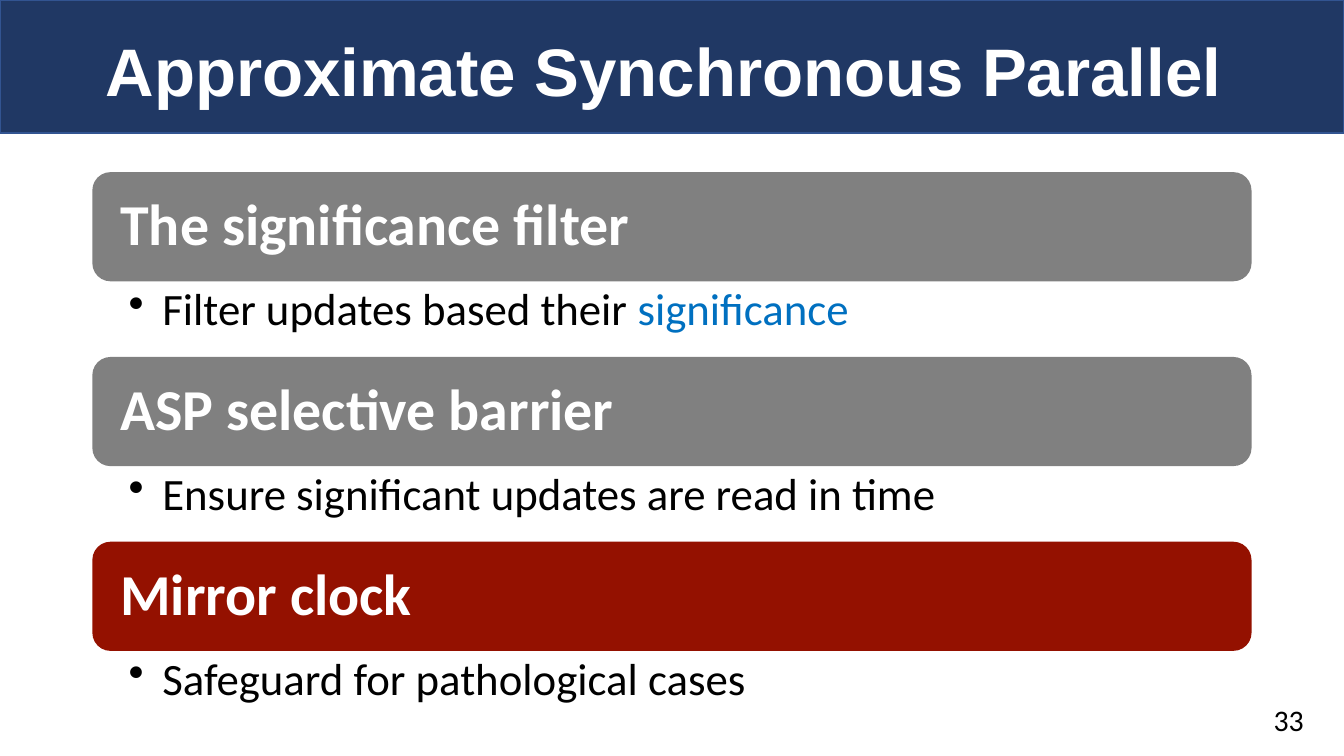
"""Build the Approximate Synchronous Parallel slide."""
from lxml import etree
from pptx import Presentation
from pptx.dml.color import RGBColor
from pptx.enum.shapes import MSO_SHAPE
from pptx.enum.text import MSO_ANCHOR, PP_ALIGN
from pptx.oxml.ns import qn
from pptx.util import Pt

RECTANGLE, ROUNDED = MSO_SHAPE.RECTANGLE, MSO_SHAPE.ROUNDED_RECTANGLE
TOP, MIDDLE = MSO_ANCHOR.TOP, MSO_ANCHOR.MIDDLE
LEFT, RIGHT = PP_ALIGN.LEFT, PP_ALIGN.RIGHT
NAVY = RGBColor(0x20, 0x38, 0x64)
EDGE = RGBColor(0x32, 0x54, 0x91)
GRAY = RGBColor(0x80, 0x80, 0x80)
RED = RGBColor(0x94, 0x11, 0x00)
BLUE = RGBColor(0x00, 0x70, 0xC0)
WHITE = RGBColor(0xFF, 0xFF, 0xFF)
BLACK = RGBColor(0x00, 0x00, 0x00)

MARGIN, WIDTH = 49.5, 621
FIRST_TOP, BAR_HEIGHT, DETAIL_HEIGHT = 92.25, 58.5, 40.5
SECTIONS = [
    ("The significance filter", GRAY, [("Filter updates based their ", BLACK), ("significance", BLUE)]),
    ("ASP selective barrier", GRAY, [("Ensure significant updates are read in time", BLACK)]),
    ("Mirror clock", RED, [("Safeguard for pathological cases", BLACK)]),
]


def add_panel(kind, left, top, width, height, fill):
    panel = page.shapes.add_shape(kind, Pt(left), Pt(top), Pt(width), Pt(height))
    panel.shadow.inherit = False
    panel.fill.solid()
    panel.fill.fore_color.rgb = fill
    panel.line.fill.background()
    return panel


def write(box, spans, font, size, bold=False, anchor=MIDDLE, align=LEFT, insets=(7.2, 3.6), spacing=0.9):
    frame = box.text_frame
    frame.word_wrap = True
    frame.vertical_anchor = anchor
    frame.margin_left = frame.margin_right = Pt(insets[0])
    frame.margin_top = frame.margin_bottom = Pt(insets[1])
    para = frame.paragraphs[0]
    para.alignment = align
    para.line_spacing = spacing
    para.font.name, para.font.size, para.font.bold = font, Pt(size), bold
    for text, color in spans:
        span = para.add_run()
        span.text = text
        span.font.color.rgb = color
    return para


deck = Presentation()
deck.slide_width, deck.slide_height = Pt(720), Pt(405)
page = deck.slides.add_slide(deck.slide_layouts[6])

banner = add_panel(RECTANGLE, 0, 0, 720, 71.25, NAVY)
banner.line.color.rgb = EDGE
banner.line.width = Pt(1)
title = page.shapes.add_textbox(Pt(MARGIN), Pt(9.25), Pt(WIDTH), Pt(62))
write(title, [("Approximate Synchronous Parallel", WHITE)], "Arial", 36, bold=True)

for index, (heading, color, details) in enumerate(SECTIONS):
    top = FIRST_TOP + index * (BAR_HEIGHT + DETAIL_HEIGHT)
    bar = add_panel(ROUNDED, MARGIN, top, WIDTH, BAR_HEIGHT, color)
    write(bar, [(heading, WHITE)], "Calibri", 31, bold=True, insets=(12.2, 9))

    detail = page.shapes.add_textbox(Pt(MARGIN), Pt(top + BAR_HEIGHT), Pt(WIDTH), Pt(DETAIL_HEIGHT))
    para = write(detail, details, "Calibri", 24, anchor=TOP, insets=(19.5, 3))
    properties = para._p.get_or_add_pPr()
    properties.set("marL", str(Pt(18)))
    properties.set("indent", str(Pt(-18)))
    bullet = etree.Element(qn("a:buChar"), char="•")
    properties.find(qn("a:defRPr")).addprevious(bullet)

number = page.shapes.add_textbox(Pt(543.5), Pt(375), Pt(162), Pt(21.5))
write(number, [("33", BLACK)], "Calibri", 16, align=RIGHT, spacing=1.0)

deck.save("out.pptx")
